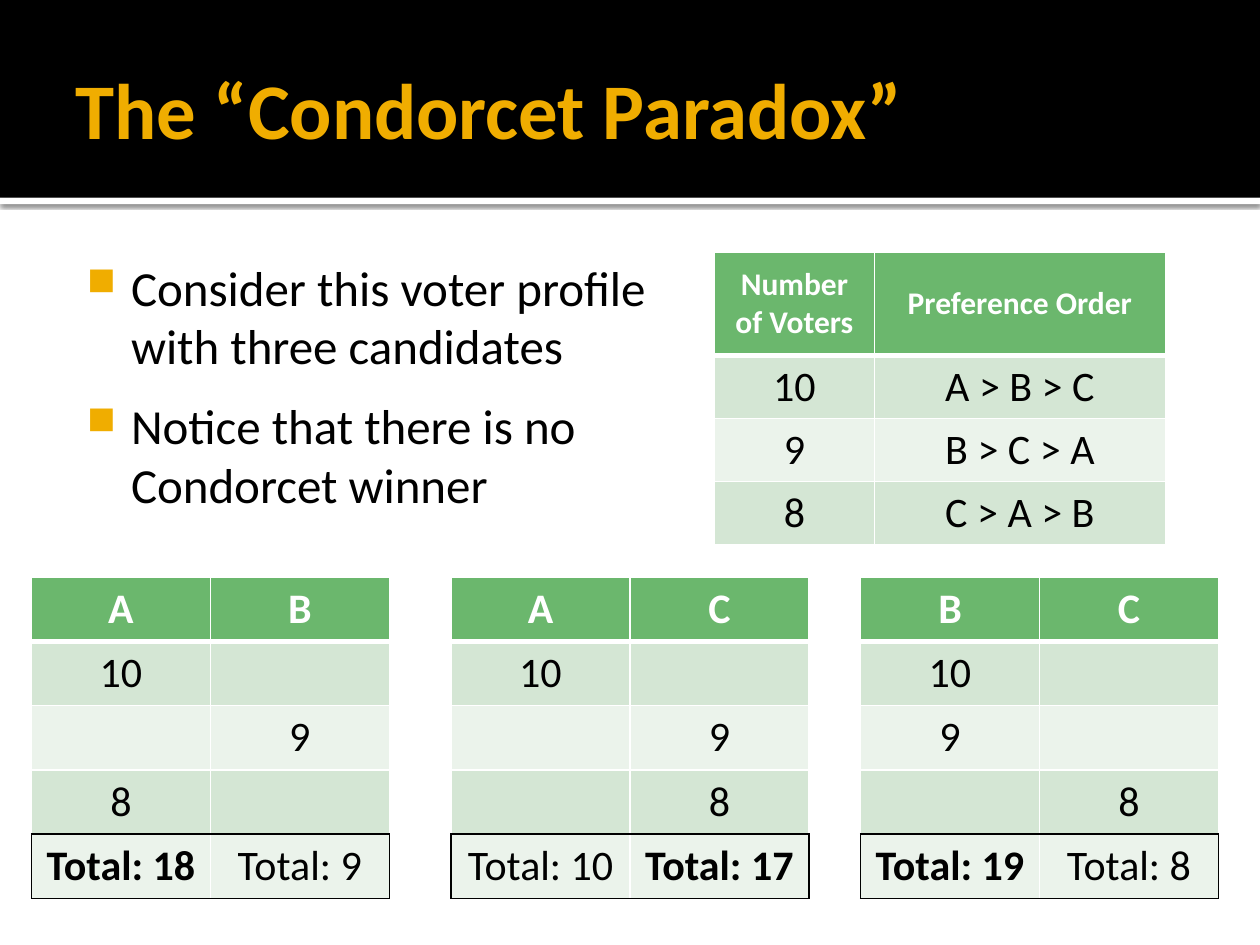
from lxml.etree import SubElement
from pptx import Presentation
from pptx.dml.color import RGBColor
from pptx.enum.shapes import MSO_SHAPE
from pptx.enum.text import MSO_ANCHOR, PP_ALIGN
from pptx.oxml.ns import qn
from pptx.util import Inches, Pt

TITLE = "The “Condorcet Paradox”"
BULLETS = [
    "Consider this voter profile with three candidates",
    "Notice that there is no Condorcet winner",
]
PROFILE_HEADER = ["Number of Voters", "Preference Order"]
PROFILE = [(10, "A > B > C"), (9, "B > C > A"), (8, "C > A > B")]
MATCHES = [("A", "B", 0.25), ("A", "C", 3.58), ("B", "C", 6.83)]  # candidates, left

FONT = "Calibri"
BLACK = RGBColor(0x00, 0x00, 0x00)
WHITE = RGBColor(0xFF, 0xFF, 0xFF)
GOLD = RGBColor(0xF0, 0xAD, 0x00)
GREEN = RGBColor(0x6B, 0xB7, 0x6D)
BANDS = [RGBColor(0xD4, 0xE6, 0xD4), RGBColor(0xEB, 0xF3, 0xEB)]


def add_element(parent, tag, **attributes):
    return SubElement(parent, qn(tag), {key: str(value) for key, value in attributes.items()})


def format_font(font, size, color, bold=False):
    for name, value in {"name": FONT, "size": Pt(size), "bold": bold}.items():
        setattr(font, name, value)
    font.color.rgb = color


def add_band(slide, top, height, color):
    band = slide.shapes.add_shape(
        MSO_SHAPE.RECTANGLE, 0, Inches(top), Inches(10), Inches(height))
    band.shadow.inherit = False
    band.fill.solid()
    band.fill.fore_color.rgb = color
    band.line.fill.background()
    return band


def add_shadow(shape):
    effects = shape._element.spPr.find(qn("a:effectLst"))
    shadow = add_element(effects, "a:outerShdw", blurRad=Pt(2.5), dist=Pt(0.8),
                         dir=90 * 60000, algn="tl", rotWithShape=0)
    color = add_element(shadow, "a:srgbClr", val=BLACK)
    add_element(color, "a:alpha", val=60000)


def add_text(slide, box, insets, anchor):
    frame = slide.shapes.add_textbox(*map(Inches, box)).text_frame
    frame.word_wrap = True
    frame.vertical_anchor = anchor
    for side, inset in zip(("left", "top", "right", "bottom"), insets):
        setattr(frame, f"margin_{side}", Inches(inset))
    return frame


def add_bullet(paragraph):
    properties = paragraph._p.get_or_add_pPr()
    properties.set("marL", str(Inches(0.48)))
    properties.set("indent", str(Inches(-0.35)))
    paragraph.space_after = Pt(12)
    color = add_element(properties, "a:buClr")
    add_element(color, "a:srgbClr", val=GOLD)
    add_element(properties, "a:buSzPct", val=80000)
    add_element(properties, "a:buChar", char="■")


def set_borders(cell, borders):
    """Draw borders given as {side: (color, points)}, sides being L, R, T, B."""
    properties = cell._tc.get_or_add_tcPr()
    for side in "LRTB":
        color, width = borders[side]
        line = add_element(properties, f"a:ln{side}", w=Pt(width))
        fill = add_element(line, "a:solidFill")
        add_element(fill, "a:srgbClr", val=color)


def add_grid(slide, left, top, widths, heights, rows, header_size,
             has_total=False, winner=None):
    table = slide.shapes.add_table(
        len(rows), len(widths), Inches(left), Inches(top),
        Inches(sum(widths)), Inches(sum(heights))).table
    for column, width in zip(table.columns, widths):
        column.width = Inches(width)
    for row, height in zip(table.rows, heights):
        row.height = Inches(height)

    total_row = len(rows) - 1 if has_total else None
    for r, values in enumerate(rows):
        for c, value in enumerate(values):
            cell = table.cell(r, c)
            header, total = r == 0, r == total_row
            borders = dict.fromkeys("LRTB", (WHITE, 1))
            if header:
                borders["B"] = (WHITE, 3)
            if r == 1:
                borders["T"] = (WHITE, 3)
            if has_total and r == total_row - 1:
                borders["B"] = (BLACK, 1)
            if total:
                for side in ("T", "B", "L" if c == 0 else "R"):
                    borders[side] = (BLACK, 1)
            set_borders(cell, borders)
            cell.fill.solid()
            cell.fill.fore_color.rgb = GREEN if header else BANDS[(r - 1) % 2]
            cell.vertical_anchor = MSO_ANCHOR.MIDDLE
            cell.text = str(value)
            paragraph = cell.text_frame.paragraphs[0]
            paragraph.alignment = PP_ALIGN.CENTER
            format_font(paragraph.font if value == "" else paragraph.runs[0].font,
                        header_size if header else 24,
                        WHITE if header else BLACK,
                        header or (total and c == winner))


def add_match(slide, first, second, left):
    """Give each group's votes to whichever candidate it ranks higher."""
    rows, totals = [(first, second)], [0, 0]
    for voters, order in PROFILE:
        choice = 0 if order.index(first) < order.index(second) else 1
        totals[choice] += voters
        rows.append([voters if side == choice else "" for side in (0, 1)])
    rows.append([f"Total: {total}" for total in totals])
    add_grid(slide, left, 4.58, [1.42] * 2, [0.51] * len(rows), rows, 24,
             has_total=True, winner=totals.index(max(totals)))


def main():
    presentation = Presentation()
    presentation.slide_width, presentation.slide_height = Inches(10), Inches(7.5)
    slide = presentation.slides.add_slide(presentation.slide_layouts[6])

    add_shadow(add_band(slide, 1.57, 0.05, WHITE))
    add_band(slide, 0, 1.57, BLACK)

    title = add_text(slide, (0.5, 0.17, 9, 1.37), (0.1, 0.05, 0.05, 0.05), MSO_ANCHOR.MIDDLE)
    title.text = TITLE
    format_font(title.paragraphs[0].runs[0].font, 45, GOLD, True)

    body = add_text(slide, (0.5, 1.94, 5.08, 2.98), (0.06, 0.1, 0.1, 0.05), MSO_ANCHOR.TOP)
    body.text = "\n".join(BULLETS)
    for paragraph in body.paragraphs:
        add_bullet(paragraph)
        format_font(paragraph.runs[0].font, 28, BLACK)

    add_grid(slide, 5.67, 2, [1.27, 2.31], [0.82] + [0.5] * len(PROFILE),
             [PROFILE_HEADER, *PROFILE], 18)
    for match in MATCHES:
        add_match(slide, *match)

    presentation.save("out.pptx")


if __name__ == "__main__":
    main()
